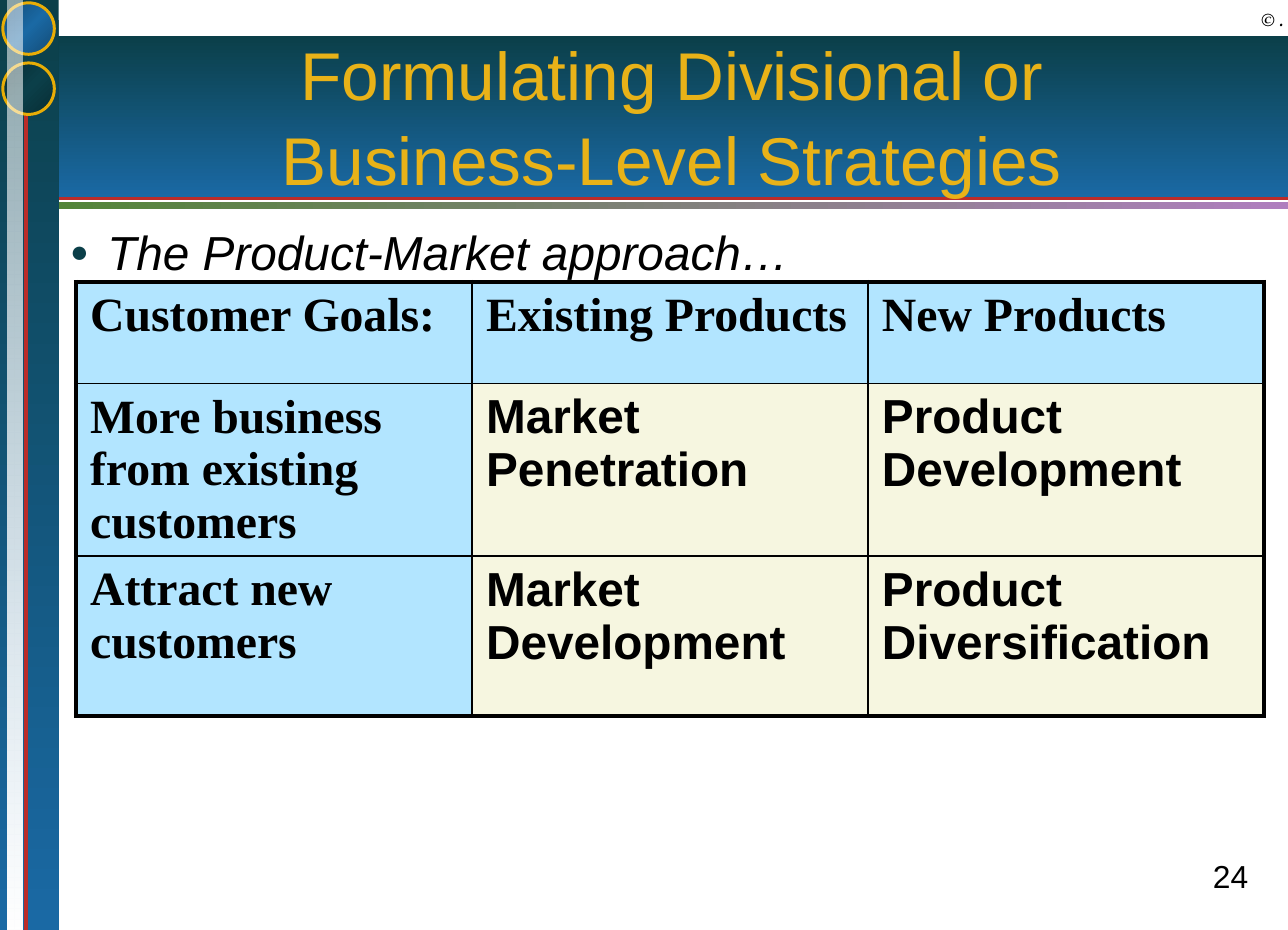
import copy
from lxml import etree
from pptx import Presentation, util as u
from pptx.dml.color import RGBColor
from pptx.enum import shapes, text
from pptx.oxml.ns import qn

COLORS = {
    "black": "000000", "white": "FFFFFF", "gold": "E8AD06", "title": "E8B218",
    "red": "BB2C29", "teal": "0B3F49", "blue": "1A69A4", "dark_teal": "082D34",
    "dark_blue": "134B75", "green": "538438", "violet": "AF7EBE",
    "sky": "66CCFF", "cream": "F6F6E0",
}
ARIAL, TIMES, PAGELLA = "Arial", "Times New Roman", "TeX Gyre Pagella"


def add(parent, tag, **attrs):
    el = etree.SubElement(parent, qn(tag))
    for key, value in attrs.items():
        el.set(key, str(value))
    return el


def color(name):
    return RGBColor.from_string(COLORS[name])


class Deck:
    def __init__(self, width, height):
        self.prs = Presentation()
        self.prs.slide_width, self.prs.slide_height = u.Inches(width), u.Inches(height)
        self.s = self.prs.slides.add_slide(self.prs.slide_layouts[1])

    def shape(self, kind, at, stops, angle, line=None):
        sp = self.s.shapes.add_shape(kind, *map(u.Inches, at))
        sp.shadow.inherit = False
        sp.fill.gradient()
        grad = sp._element.spPr.find(qn("a:gradFill"))
        for el in list(grad):
            grad.remove(el)
        gs_list = add(grad, "a:gsLst")
        for pos, name, alpha in stops:
            clr = add(add(gs_list, "a:gs", pos=pos * 1000), "a:srgbClr", val=COLORS[name])
            if alpha < 100:
                add(clr, "a:alpha", val=alpha * 1000)
        add(grad, "a:lin", ang=angle * 60000, scaled=0)
        if line:
            sp.line.color.rgb = color(line)
            sp.line.width = u.Pt(1.5)
        else:
            sp.line.fill.background()

    def line(self, start, end, name, width):
        points = map(u.Inches, (*start, *end))
        cx = self.s.shapes.add_connector(shapes.MSO_CONNECTOR.STRAIGHT, *points)
        cx.line.color.rgb = color(name)
        cx.line.width = u.Pt(width)
        add(cx._element.spPr, "a:effectLst")

    def put_text(self, tf, content, size, font, name="black", para=None, **style):
        p = tf.paragraphs[0]
        p.text = content
        for key, value in (para or {}).items():
            setattr(p, key, value)
        for r in p.runs:
            r.font.color.rgb = color(name)
            for key, value in dict(style, size=u.Pt(size), name=font).items():
                setattr(r.font, key, value)
        return p

    def frame(self, sp, insets, **style):
        tf = sp.text_frame
        sides = ("margin_left", "margin_top", "margin_right", "margin_bottom")
        for key, value in dict(zip(sides, map(u.Inches, insets)), **style).items():
            setattr(tf, key, value)
        return tf

    def textbox(self, at, content, size, font, insets, wrap, anchor, **style):
        sp = self.s.shapes.add_textbox(*map(u.Inches, at))
        tf = self.frame(sp, insets, word_wrap=wrap, vertical_anchor=anchor)
        self.put_text(tf, content, size, font, para={"alignment": text.PP_ALIGN.RIGHT}, **style)

    def placeholder(self, index, at, anchor):
        sp = self.s.placeholders[index]
        sp.left, sp.top, sp.width, sp.height = map(u.Inches, at)
        return self.frame(sp, (0.09, 0.04, 0.09, 0.04), word_wrap=True,
                          auto_size=text.MSO_AUTO_SIZE.NONE, vertical_anchor=anchor)

    def title(self, at, content):
        tf = self.placeholder(0, at, text.MSO_ANCHOR.MIDDLE)
        p = self.put_text(tf, content, 34, ARIAL, "title",
                          {"alignment": text.PP_ALIGN.CENTER, "line_spacing": 1.04})
        for r in p.runs:
            rPr = r._r.get_or_add_rPr()
            effects = etree.Element(qn("a:effectLst"))
            shadow = add(effects, "a:outerShdw", dist=38100, dir=2700000, algn="tl")
            add(shadow, "a:srgbClr", val=COLORS["black"])
            rPr.find(qn("a:solidFill")).addnext(effects)
        for br in p._p.findall(qn("a:br")):
            br.append(copy.deepcopy(p.runs[0]._r.rPr))

    def bullet(self, at, content):
        tf = self.placeholder(1, at, text.MSO_ANCHOR.TOP)
        p = self.put_text(tf, content, 24, ARIAL, para={"space_before": u.Pt(4.8)}, italic=True)
        pPr = p._p.get_or_add_pPr()
        pPr.set("marL", str(u.Inches(0.26)))
        pPr.set("indent", str(-u.Inches(0.26)))
        add(add(pPr, "a:buClr"), "a:srgbClr", val=COLORS["teal"])
        add(pPr, "a:buSzPct", val=65000)
        add(pPr, "a:buFont", typeface=ARIAL)
        add(pPr, "a:buChar", char="●")

    def borders(self, cell, widths):
        tcPr = cell._tc.get_or_add_tcPr()
        for side, width in zip("LRTB", widths):
            ln = add(tcPr, f"a:ln{side}", w=u.Pt(width))
            add(add(ln, "a:solidFill"), "a:srgbClr", val=COLORS["black"])

    def table(self, at, rows, heights):
        n_rows, n_cols = len(rows), len(rows[0])
        tbl = self.s.shapes.add_table(n_rows, n_cols, *map(u.Inches, at)).table
        for col in tbl.columns:
            col.width = u.Inches(at[2] / n_cols)
        for i, (row, height) in enumerate(zip(rows, heights)):
            tbl.rows[i].height = u.Inches(height)
            for j, content in enumerate(row):
                cell = tbl.cell(i, j)
                edges = (j == 0, j == n_cols - 1, i == 0, i == n_rows - 1)
                self.borders(cell, [2.25 if edge else 1 for edge in edges])
                header = i == 0 or j == 0
                cell.fill.solid()
                cell.fill.fore_color.rgb = color("sky" if header else "cream")
                if header:
                    clr = cell._tc.tcPr.find(qn("a:solidFill")).find(qn("a:srgbClr"))
                    add(clr, "a:alpha", val=50000)
                self.put_text(cell.text_frame, content, 24, TIMES if header else ARIAL,
                              para={"space_before": u.Pt(4.8)}, bold=True)


def main():
    deck = Deck(9, 6.5)
    rect, oval = shapes.MSO_SHAPE.RECTANGLE, shapes.MSO_SHAPE.OVAL
    band = [(0, "teal", 100), (100, "blue", 100)]

    deck.shape(rect, (0.39, 1.41, 8.61, 0.05), [(0, "green", 100), (100, "violet", 100)], 0)
    deck.shape(rect, (0, 0.25, 9, 1.13), band, 90)
    deck.line((0.39, 1.39), (9, 1.39), "red", 1.5)
    deck.shape(rect, (0, 0, 0.41, 6.5), band, 90)
    deck.line((0.18, 0.79), (0.18, 6.5), "red", 2.25)
    for top, edge, middle in ((0.44, "dark_teal", "teal"), (0.02, "dark_blue", "blue")):
        stops = [(0, edge, 100), (50, middle, 100), (100, edge, 100)]
        deck.shape(oval, (0.02, top, 0.36, 0.36), stops, 45, "gold")
    deck.shape(rect, (0.05, 0, 0.11, 6.5), [(0, "white", 52), (100, "white", 100)], 90)

    deck.textbox((8.03, 5.94, 0.79, 0.37), "24", 16, ARIAL,
                 (0.1, 0.05, 0.1, 0.05), True, text.MSO_ANCHOR.TOP)
    deck.textbox((8.81, 0.06, 0.16, 0.15), "© .", 9, PAGELLA,
                 (0, 0, 0, 0), False, text.MSO_ANCHOR.BOTTOM, bold=True, italic=True)
    deck.title((0.39, 0.26, 8.61, 1.08), "Formulating Divisional or\nBusiness-Level Strategies")
    deck.bullet((0.4, 1.52, 5.3, 1.17), "The Product-Market approach…")
    deck.table((0.53, 1.97, 8.3, 2.94), [
        ("Customer Goals:", "Existing Products", "New Products"),
        ("More business from existing customers", "Market Penetration", "Product Development"),
        ("Attract new customers", "Market Development", "Product Diversification"),
    ], (0.71, 1.11, 1.12))

    shape_tree = deck.s.shapes._spTree
    for sp in list(deck.s.placeholders):
        shape_tree.remove(sp._element)
        shape_tree.append(sp._element)
    shape_tree.append(next(sh for sh in deck.s.shapes if sh.has_table)._element)
    deck.prs.save("out.pptx")


if __name__ == "__main__":
    main()
